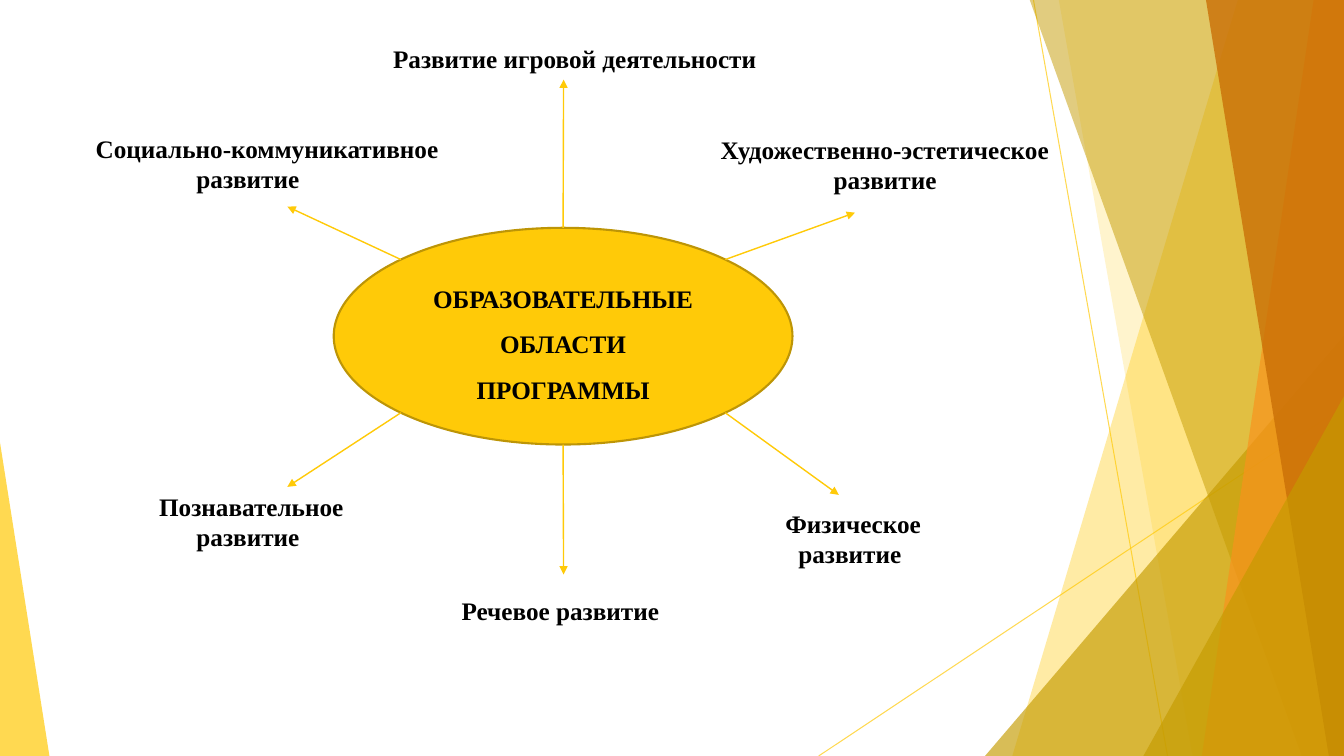
"""Build a slide with the educational areas of a programme around an ellipse."""
import math

from pptx import Presentation
from pptx.dml.color import RGBColor
from pptx.enum import shapes, text
from pptx.oxml import ns, xmlchemy
from pptx.util import Inches, Pt

W, H = 13.33, 7.5
GOLD, OLIVE, ORANGE, BROWN = "FFCA08", "C59B00", "F8931D", "CA6F06"
LABELS = [
    (0.85, 1.27, 4.07, [("Социально-коммуникативное", 0), ("развитие", 1)]),
    (7.05, 1.28, 3.87, [("Художественно-эстетическое", 0), ("развитие", 1.12)]),
    (1.23, 4.82, 3.02, [("Познавательное", 0.25), ("развитие", 0.62)]),
    (4.48, 5.86, 3.39, [("Речевое развитие", 0)]),
    (7.2, 4.99, 4.32, [("Физическое", 0.49), ("развитие", 0.62)]),
    (3.8, 0.38, 4.39, [("Развитие игровой деятельности", 0)]),
]
ARROWS = [(270, 5.59, 0.79), (315, 8.48, 2.11), (45, 8.32, 4.91),
          (90, 5.59, 5.7), (135, 2.85, 4.83), (225, 2.85, 2.05)]


def rgb(color):
    """Turn a hex string into a colour."""
    return RGBColor.from_string(color)


def add_child(parent, tag, **attrs):
    """Append a drawing element with attributes."""
    child = xmlchemy.OxmlElement(tag)
    for name, value in attrs.items():
        child.set(name, value)
    parent.append(child)
    return child


def set_alpha(owner, percent):
    """Make the solid colour of a shape or a line translucent."""
    color = next(owner.iter(ns.qn("a:srgbClr")))
    add_child(color, "a:alpha", val=str(percent * 1000))


def paint(sp, color, alpha):
    """Fill a borderless shape with a translucent colour."""
    sp.shadow.inherit = False
    sp.fill.solid()
    sp.fill.fore_color.rgb = rgb(color)
    sp.line.fill.background()
    set_alpha(sp._element.spPr, alpha)


def add_line(s, x1, y1, x2, y2, width):
    """Draw a plain gold line."""
    line = s.shapes.add_connector(shapes.MSO_CONNECTOR.STRAIGHT, *map(Inches, (x1, y1, x2, y2)))
    line.line.color.rgb = rgb(GOLD)
    line.line.width = Pt(width)
    add_child(line._element.spPr, "a:effectLst")
    return line


def add_band(s, top, bottom, color, alpha):
    """Draw a slanted band reaching the right edge of the slide."""
    builder = s.shapes.build_freeform(Inches(top), Inches(-0.01))
    corners = [(W, -0.01), (W, H), (bottom, H)]
    builder.add_line_segments([(Inches(x), Inches(y)) for x, y in corners])
    paint(builder.convert_to_shape(), color, alpha)


def add_wedge(s, x, y, right, color, alpha, apex):
    """Draw a triangle standing on the bottom edge of the slide."""
    sp = s.shapes.add_shape(shapes.MSO_SHAPE.ISOSCELES_TRIANGLE,
                            *map(Inches, (x, y, right - x, H - y)))
    sp.adjustments[0] = apex
    paint(sp, color, alpha)


def add_decoration(s):
    """Draw the translucent facets at the slide edges."""
    for ends in [(10.25, 0, 11.58, H), (W, 4.03, 8.12, H)]:
        set_alpha(add_line(s, *ends, 0.75)._element.spPr, 70)
    add_band(s, 12.28, 10.04, GOLD, 36)
    add_band(s, 10.5, 11.83, GOLD, 20)
    add_wedge(s, 9.77, 3.33, W, OLIVE, 66, 1)
    add_band(s, 10.21, 12.91, OLIVE, 50)
    add_band(s, 13.03, 11.92, ORANGE, 70)
    add_band(s, 11.96, 13.18, BROWN, 80)
    add_wedge(s, 11.34, 3.93, W, OLIVE, 66, 1)
    add_wedge(s, 0, 4.39, 0.49, GOLD, 70, 0)


def write(tf, lines):
    """Write bold black paragraphs."""
    tf.word_wrap = True
    for i, line in enumerate(lines):
        p = tf.paragraphs[0] if i == 0 else tf.add_paragraph()
        p.text = line
        font = p.runs[0].font
        font.name, font.size, font.bold = "Times New Roman", Pt(18), True
        font.color.rgb = rgb("000000")


def add_label(s, x, y, w, lines):
    """Place one area name with its line indents."""
    height = 0.4 if len(lines) == 1 else 0.71
    tf = s.shapes.add_textbox(*map(Inches, (x, y, w, height))).text_frame
    write(tf, [line for line, _ in lines])
    tf.auto_size = text.MSO_AUTO_SIZE.SHAPE_TO_FIT_TEXT
    for p, (_, indent) in zip(tf.paragraphs, lines):
        p._p.get_or_add_pPr().set("marL", str(Inches(indent)))


def add_hub(s, x, y, w, h):
    """Draw the central ellipse and the arrows leaving its outline."""
    hub = s.shapes.add_shape(shapes.MSO_SHAPE.OVAL, *map(Inches, (x, y, w, h)))
    hub.shadow.inherit = False
    hub.fill.solid()
    hub.fill.fore_color.rgb = rgb(GOLD)
    hub.line.color.rgb = rgb("BD9506")
    hub.line.width = Pt(1.5)
    write(hub.text_frame, ["ОБРАЗОВАТЕЛЬНЫЕ ОБЛАСТИ", "ПРОГРАММЫ"])
    hub.text_frame.vertical_anchor = text.MSO_ANCHOR.MIDDLE
    for p in hub.text_frame.paragraphs:
        p.alignment = text.PP_ALIGN.CENTER
        p.line_spacing = 1.5
    for degrees, to_x, to_y in ARROWS:
        angle = math.radians(degrees)
        from_x = x + w / 2 * (1 + math.cos(angle))
        from_y = y + h / 2 * (1 + math.sin(angle))
        arrow = add_line(s, from_x, from_y, to_x, to_y, 1)
        add_child(arrow.line._get_or_add_ln(), "a:tailEnd", type="triangle")
        if degrees == 270:
            arrow.begin_connect(hub, 0)


def main():
    """Build and save the slide."""
    prs = Presentation()
    prs.slide_width, prs.slide_height = Inches(W), Inches(H)
    s = prs.slides.add_slide(prs.slide_layouts[6])
    add_decoration(s)
    add_hub(s, 3.31, 2.26, 4.55, 2.15)
    for label in LABELS:
        add_label(s, *label)
    prs.save("out.pptx")


if __name__ == "__main__":
    main()
